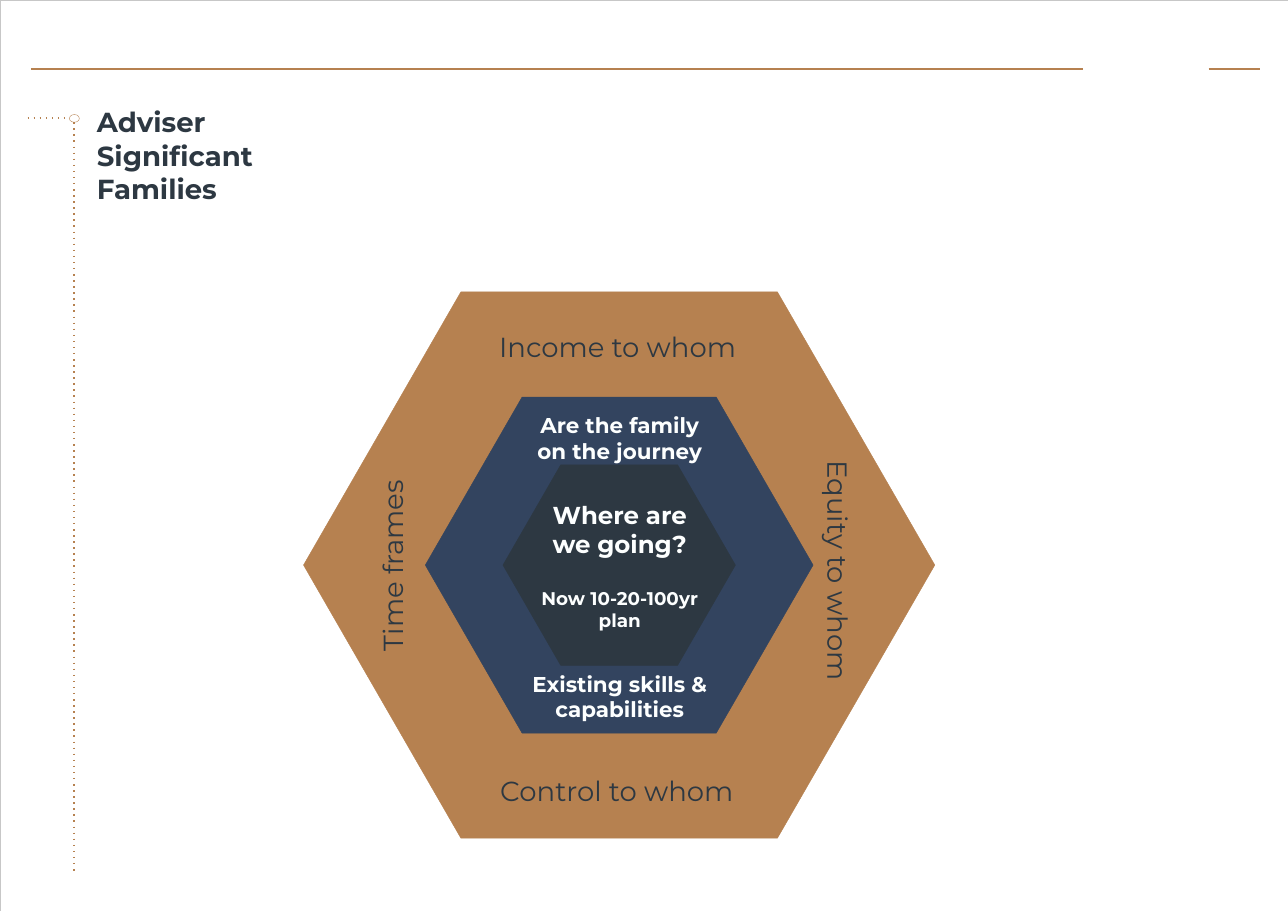
from lxml import etree
from pptx import Presentation
from pptx.dml.color import RGBColor
from pptx.enum import shapes, text
from pptx.oxml.ns import qn
from pptx.util import Inches, Pt

COPPER, NAVY, SLATE, WHITE, GREY = "B68150", "33445F", "2D3842", "FDFFFF", "C7C7C7"
LEFT, CENTER = text.PP_ALIGN.LEFT, text.PP_ALIGN.CENTER
HEXAGON_CENTER = (5.62, 5.13)


def rgb(value):
    return RGBColor.from_string(value)


class SlideBuilder:
    font = "Montserrat"

    def __init__(self, slide):
        self.slide = slide

    def add_shape(self, kind, left, top, width, height, fill=None, line=None):
        shape = self.slide.shapes.add_shape(
            kind, Inches(left), Inches(top), Inches(width), Inches(height))
        shape.shadow.inherit = False
        if fill:
            shape.fill.solid()
            shape.fill.fore_color.rgb = rgb(fill)
        else:
            shape.fill.background()
        shape.line.color.rgb = rgb(line or fill)
        shape.line.width = Pt(0.25)
        return shape

    def add_hexagon(self, width, height, color):
        """Add a hexagon around the common center."""
        x, y = HEXAGON_CENTER
        hexagon = self.add_shape(shapes.MSO_SHAPE.HEXAGON, x - width / 2,
                                 y - height / 2, width, height, color)
        hexagon.adjustments[0] = 0.288

    def add_line(self, x1, y1, x2, y2, width=1, dash="solid"):
        connector = self.slide.shapes.add_connector(
            shapes.MSO_CONNECTOR.STRAIGHT, Inches(x1), Inches(y1), Inches(x2), Inches(y2))
        connector.line.color.rgb = rgb(COPPER)
        connector.line.width = Pt(width)
        properties = connector._element.spPr
        etree.SubElement(properties.find(qn("a:ln")), qn("a:prstDash"), val=dash)
        etree.SubElement(properties, qn("a:effectLst"))

    def add_text(self, left, top, width, height, lines, color=SLATE, bold=False,
                 align=LEFT, vertical=None):
        """Add a text box; each line is (text, size, space before)."""
        box = self.slide.shapes.add_textbox(
            Inches(left), Inches(top), Inches(width), Inches(height))
        frame = box.text_frame
        frame.word_wrap = True
        frame.margin_left = frame.margin_right = frame.margin_bottom = 0
        frame.margin_top = Inches(0.01)
        if vertical:
            frame._txBody.bodyPr.set("vert", vertical)
        for index, (words, size, space_before) in enumerate(lines):
            paragraph = frame.add_paragraph() if index else frame.paragraphs[0]
            paragraph.alignment = align
            paragraph.space_before = Pt(space_before)
            run = paragraph.add_run()
            run.text = words
            run.font.name = self.font
            run.font.size = Pt(size)
            run.font.bold = bold
            run.font.color.rgb = rgb(color)


def main():
    presentation = Presentation()
    presentation.slide_width = Inches(11.69)
    presentation.slide_height = Inches(8.27)
    builder = SlideBuilder(presentation.slides.add_slide(presentation.slide_layouts[6]))

    builder.add_shape(shapes.MSO_SHAPE.RECTANGLE, 0, 0, 11.69, 8.27, line=GREY)
    builder.add_hexagon(5.73, 4.96, COPPER)
    for words, left, top, width, height, vertical in (
            ("Equity to whom", 7.43, 4.17, 0.33, 2.07, "vert"),
            ("Income to whom", 4.53, 2.99, 2.22, 0.33, None),
            ("Control to whom", 4.54, 7.02, 2.19, 0.33, None),
            ("Time frames", 3.41, 4.3, 0.33, 1.61, "vert270")):
        builder.add_text(left, top, width, height, [(words, 18, 1)], vertical=vertical)

    builder.add_hexagon(3.52, 3.05, NAVY)
    builder.add_hexagon(2.11, 1.82, SLATE)
    builder.add_text(4.82, 3.73, 1.61, 2.91, [
        ("Are the family", 14, 1),
        ("on the journey", 14, 0),
        ("Where are", 16, 24),
        ("we going?", 16, 0),
        ("Now 10-20-100yr", 12, 18.3),
        ("plan", 12, 0),
        ("Existing skills & capabilities", 14, 26),
    ], WHITE, bold=True, align=CENTER)

    for start, end in ((0.28, 9.83), (10.97, 11.44)):
        builder.add_line(start, 0.63, end, 0.63, width=1.25)

    builder.add_line(0.25, 1.07, 0.63, 1.07, dash="dot")
    builder.add_shape(shapes.MSO_SHAPE.OVAL, 0.63, 1.04, 0.09, 0.07, line=COPPER)
    builder.add_line(0.67, 1.11, 0.67, 7.93, dash="dot")
    builder.add_text(0.88, 0.94, 2.4, 0.64, [
        ("Adviser", 18, 1),
        ("Significant Families", 18, 0.7),
    ], bold=True)

    presentation.save("out.pptx")


if __name__ == "__main__":
    main()
